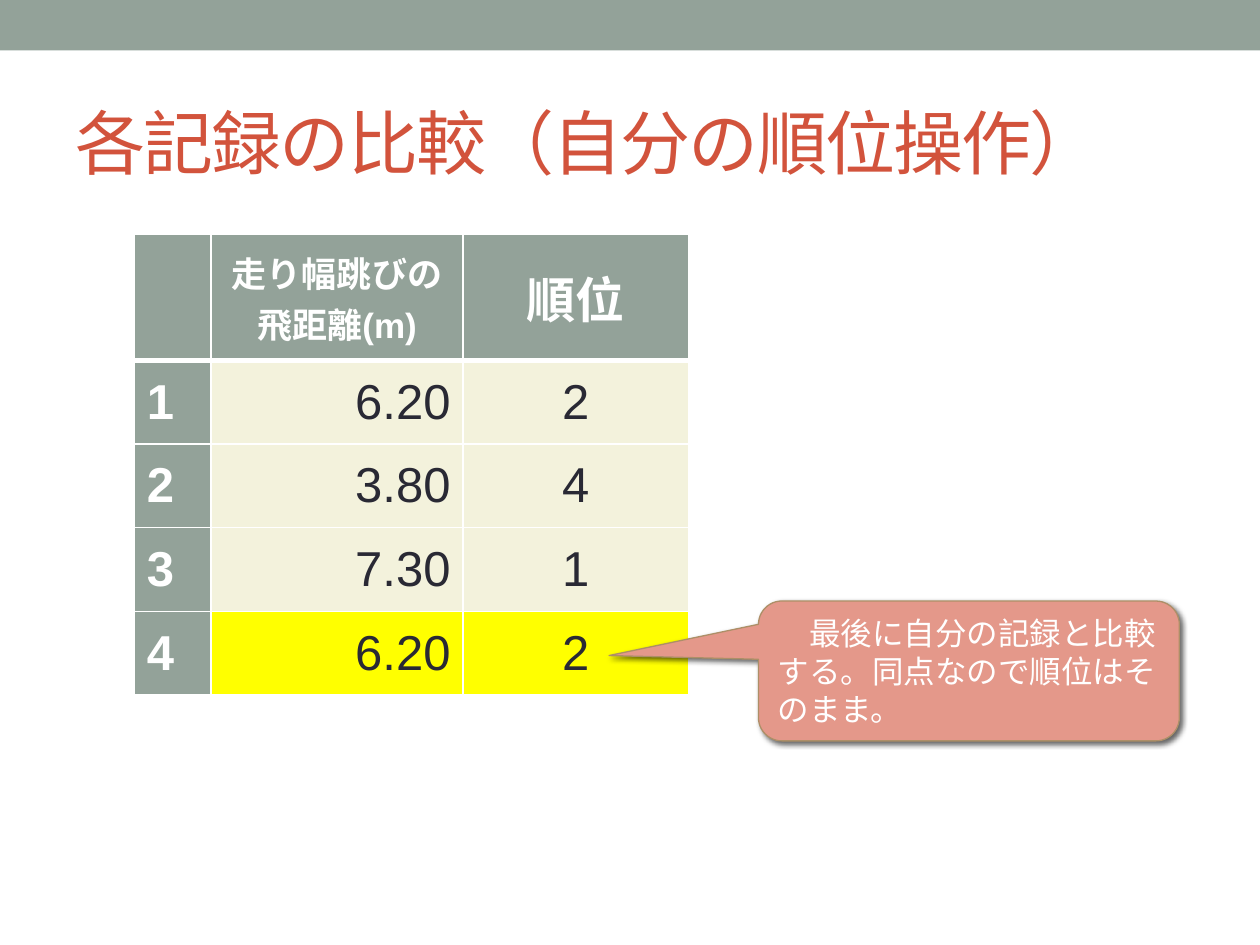
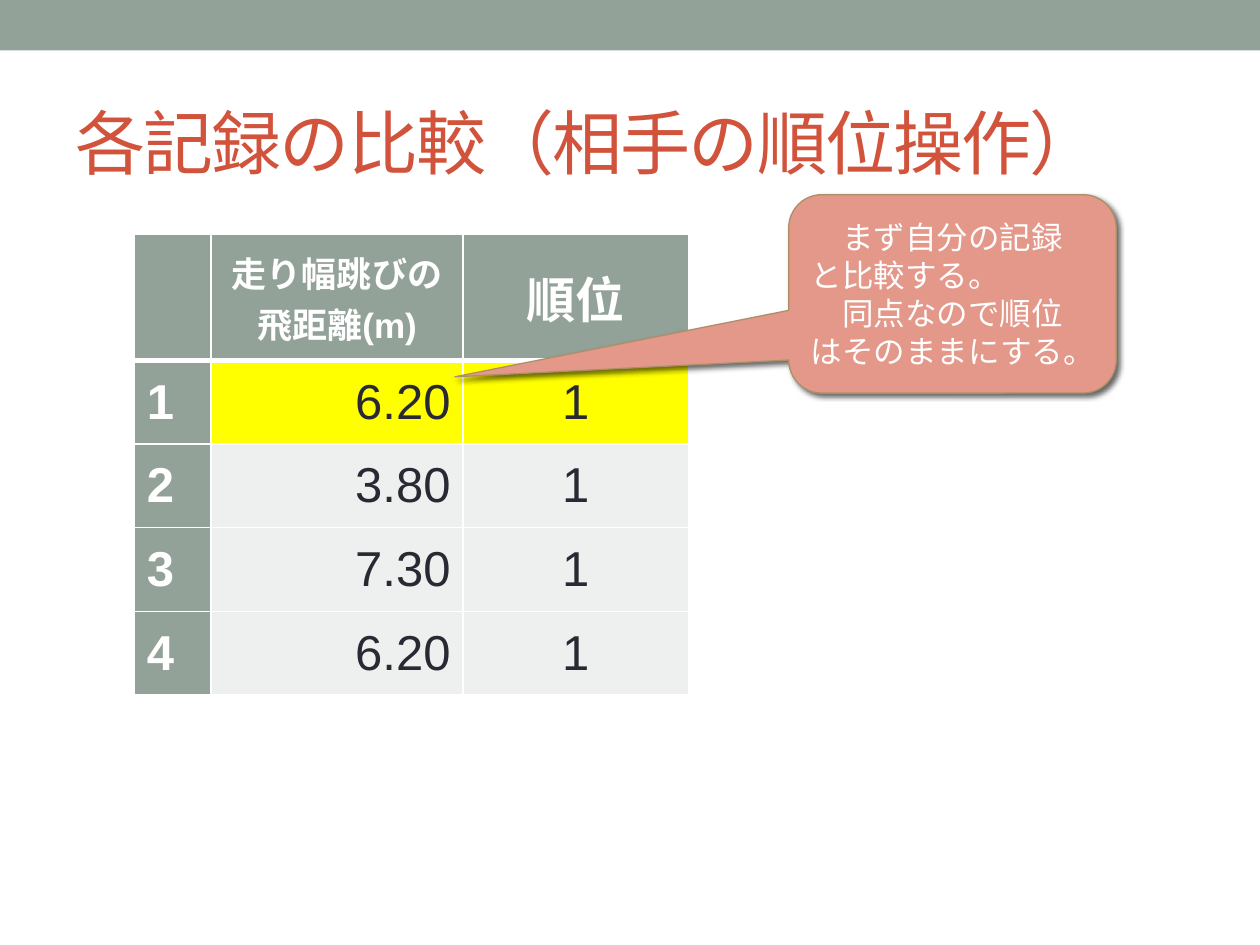
"""Two slides on comparing long-jump records: a ranking table, each with a callout."""
from dataclasses import dataclass

from lxml.etree import SubElement
from pptx import Presentation
from pptx.dml.color import RGBColor
from pptx.enum.shapes import MSO_SHAPE as SHAPE
from pptx.enum.text import MSO_ANCHOR as ANCHOR, PP_ALIGN as ALIGN
from pptx.oxml.ns import qn
from pptx.util import Emu, Inches, Pt

SLIDE_W, SLIDE_H = Inches(10), Inches(7.5)
GRID_COLS, GRID_ROWS = 100, 75
FONT = "Arial"
SAGE, WHITE, INK, TITLE_RED = "93A299", "FFFFFF", "292934", "D2533C"
CREAM, PALE, YELLOW = "F3F2DC", "EEF0EF", "FFFF00"
SALMON, TAN, BLACK = "E4988A", "AD8F67", "000000"

HEADERS = (("", 18), ("走り幅跳びの\n飛距離(m)", 20), ("順位", 28))
DISTANCES = ("6.20", "3.80", "7.30", "6.20")
COL_SPANS = (6.1, 20, 17.9)
ROW_SPANS = (10,) + (6.64,) * len(DISTANCES)
COL_ALIGNS = (ALIGN.LEFT, ALIGN.RIGHT, ALIGN.CENTER)


@dataclass(frozen=True)
class Box:
    col: float
    row: float
    cols: float
    rows: float

    def emu(self) -> tuple[Emu, Emu, Emu, Emu]:
        return across(self.col), down(self.row), across(self.cols), down(self.rows)


@dataclass(frozen=True)
class Callout:
    box: Box
    tip: tuple[float, float]
    text: str


@dataclass(frozen=True)
class Step:
    title: str
    ranks: tuple[int, ...]
    current: int
    fill: str
    callout: Callout


BAND = Box(0, 0, GRID_COLS, 4)
TITLE = Box(5, 5.8, 90, 10.8)
TABLE = Box(10.65, 18.6, sum(COL_SPANS), sum(ROW_SPANS))

STEPS = (
    Step("各記録の比較（自分の順位操作）", (2, 4, 1, 2), 4, CREAM,
         Callout(Box(60.2, 47.7, 33.4, 11.1), (-0.855, -0.11),
                 "　最後に自分の記録と比較する。同点なので順位はそのまま。")),
    Step("各記録の比較（相手の順位操作）", (1, 1, 1, 1), 1, PALE,
         Callout(Box(62.6, 15.45, 26, 15.75), (-1.519, 0.418),
                 "　まず自分の記録と比較する。\n　同点なので順位はそのままにする。")),
)


def across(cols: float) -> Emu:
    return Emu(round(SLIDE_W * cols / GRID_COLS))


def down(rows: float) -> Emu:
    return Emu(round(SLIDE_H * rows / GRID_ROWS))


def rgb(color: str) -> RGBColor:
    return RGBColor.from_string(color)


def paint(target, color: str) -> None:
    target.fill.solid()
    target.fill.fore_color.rgb = rgb(color)


def write(tf, text: str, size: float, color: str,
          align=ALIGN.LEFT, bold: bool = False) -> None:
    tf.text = text
    tf.word_wrap = True
    tf.vertical_anchor = ANCHOR.MIDDLE
    for p in tf.paragraphs:
        p.alignment = align
        p.font.name, p.font.size, p.font.bold = FONT, Pt(size), bold
        p.font.color.rgb = rgb(color)


def add_solid(parent, color: str):
    fill = SubElement(parent, qn("a:solidFill"))
    return SubElement(fill, qn("a:srgbClr"), val=color)


def add_band(s) -> None:
    sp = s.shapes.add_shape(SHAPE.RECTANGLE, *BAND.emu())
    sp.shadow.inherit = False
    sp.line.fill.background()
    paint(sp, SAGE)


def add_title(s, text: str) -> None:
    tf = s.shapes.add_textbox(*TITLE.emu()).text_frame
    write(tf, text, 40, TITLE_RED)
    for r in tf.paragraphs[0].runs:
        r.font._element.set("spc", "-100")


def style_cell(cell, fill: str, bottom: float) -> None:
    tc_pr = cell._tc.get_or_add_tcPr()
    for side, width in (("L", 1), ("R", 1), ("T", 1), ("B", bottom)):
        line = SubElement(tc_pr, qn(f"a:ln{side}"), w=str(Pt(width)))
        add_solid(line, WHITE)
    paint(cell, fill)
    cell.vertical_anchor = ANCHOR.MIDDLE


def add_ranking(s, step: Step) -> None:
    table = s.shapes.add_table(len(ROW_SPANS), len(COL_SPANS), *TABLE.emu()).table
    for column, span in zip(table.columns, COL_SPANS):
        column.width = across(span)
    for row, span in zip(table.rows, ROW_SPANS):
        row.height = down(span)
    for j, (text, size) in enumerate(HEADERS):
        cell = table.cell(0, j)
        write(cell.text_frame, text, size, WHITE, ALIGN.CENTER, True)
        style_cell(cell, SAGE, 3)
    for i, (distance, rank) in enumerate(zip(DISTANCES, step.ranks), 1):
        body = YELLOW if i == step.current else step.fill
        for j, value in enumerate((i, distance, rank)):
            cell, is_number = table.cell(i, j), j == 0
            write(cell.text_frame, str(value), 28, WHITE if is_number else INK,
                  COL_ALIGNS[j], is_number)
            style_cell(cell, SAGE if is_number else body, 1)


def add_callout(s, callout: Callout) -> None:
    sp = s.shapes.add_shape(SHAPE.ROUNDED_RECTANGULAR_CALLOUT, *callout.box.emu())
    for i, value in enumerate((*callout.tip, 0.167)):
        sp.adjustments[i] = value
    paint(sp, SALMON)
    sp.line.color.rgb, sp.line.width = rgb(TAN), Pt(0.75)
    sp.shadow.inherit = False
    effects = sp._element.spPr.find(qn("a:effectLst"))
    shadow = SubElement(effects, qn("a:outerShdw"), blurRad=str(Pt(3)),
                        dist=str(Pt(2)), dir=str(45 * 60000), rotWithShape="0")
    color = SubElement(shadow, qn("a:srgbClr"), val=BLACK)
    SubElement(color, qn("a:alpha"), val="60000")
    write(sp.text_frame, callout.text, 18, WHITE)


def main() -> None:
    prs = Presentation()
    prs.slide_width, prs.slide_height = SLIDE_W, SLIDE_H
    for step in STEPS:
        s = prs.slides.add_slide(prs.slide_layouts[6])
        add_band(s)
        add_ranking(s, step)
        add_callout(s, step.callout)
        add_title(s, step.title)
    prs.save("out.pptx")


if __name__ == "__main__":
    main()
